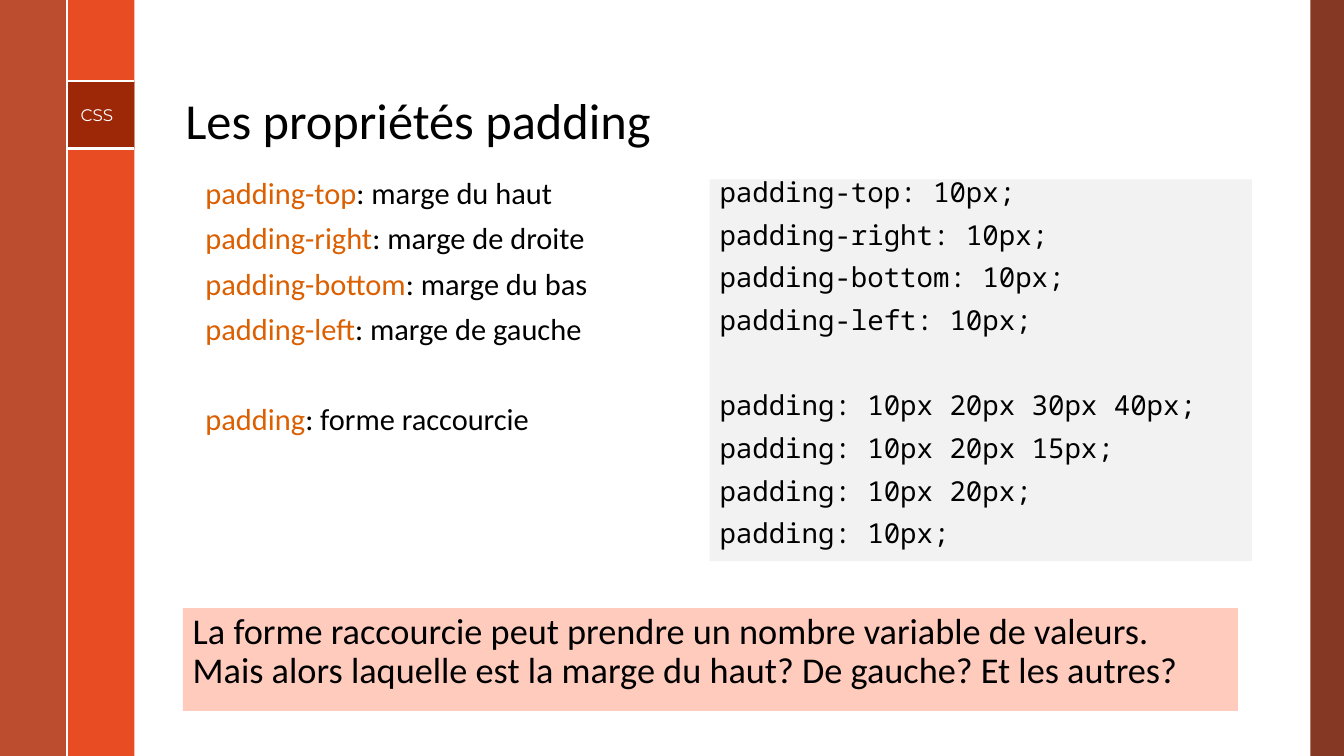
import pptx
import pptx.util
import pptx.dml.color
import pptx.enum.shapes
import pptx.enum.text
import pptx.oxml
import pptx.oxml.ns
import lxml.etree

WIDE, HIGH = 13.33, 7.5
COLS, ROWS = 20, 11.25
TAB_TOP, TAB_END = 1.21, 2.21

HUES = {
    "edge": "78230D",
    "band": "E84C22",
    "side": "B53513",
    "tab": "851D00",
    "white": "FFFFFF",
    "black": "000000",
    "word": "DC5F00",
    "gray": "F2F2F2",
    "pink": "FFCBBD",
}

FORMS = {
    "tab": {"size": 12, "name": "Montserrat", "hue": "white"},
    "title": {"size": 36, "name": "Calibri", "hue": "black"},
    "code": {"size": 19.6, "name": "Noto Sans Mono", "hue": "black"},
    "term": {"size": 21.7, "name": "Calibri", "hue": "word"},
    "sense": {"size": 21.7, "name": "Calibri", "hue": "black"},
    "note": {"size": 25.9, "name": "Calibri", "hue": "black"},
}

CODE = [
    ["padding-top: 10px;", "padding-right: 10px;", "padding-bottom: 10px;", "padding-left: 10px;"],
    [
        "padding: 10px 20px 30px 40px;",
        "padding: 10px 20px 15px;",
        "padding: 10px 20px;",
        "padding: 10px;",
    ],
]
TERMS = [
    [
        ("padding-top", "marge du haut"),
        ("padding-right", "marge de droite"),
        ("padding-bottom", "marge du bas"),
        ("padding-left", "marge de gauche"),
    ],
    [("padding", "forme raccourcie")],
]
NOTE = (
    "La forme raccourcie peut prendre un nombre variable de valeurs.\v"
    "Mais alors laquelle est la marge du haut? De gauche? Et les autres?"
)


def tint(name):
    return pptx.dml.color.RGBColor.from_string(HUES[name])


def place(col, row, cols, rows):
    across, down = WIDE / COLS, HIGH / ROWS
    return [pptx.util.Inches(n) for n in (col * across, row * down, cols * across, rows * down)]


def paint(shape, hue):
    shape.fill.solid()
    shape.fill.fore_color.rgb = tint(hue)


def add_bar(slide, spot, hue, share=100):
    bar = slide.shapes.add_shape(pptx.enum.shapes.MSO_SHAPE.RECTANGLE, *place(*spot))
    bar.shadow.inherit = False
    bar.line.fill.background()
    paint(bar, hue)
    if share < 100:
        shade = bar.fill._xPr.find(".//" + pptx.oxml.ns.qn("a:srgbClr"))
        alpha = lxml.etree.SubElement(shade, pptx.oxml.ns.qn("a:alpha"))
        alpha.set("val", str(share * 1000))


def add_rule(slide, col, row, cols, rows):
    left, top, width, height = place(col, row, cols, rows)
    rule = slide.shapes.add_connector(
        pptx.enum.shapes.MSO_CONNECTOR.STRAIGHT, left, top, left + width, top + height
    )
    rule.line.color.rgb = tint("white")
    rule.line.width = pptx.util.Pt(1.5)
    lxml.etree.SubElement(rule._element.spPr, pptx.oxml.ns.qn("a:effectLst"))


def add_run(line, text, form):
    for count, part in enumerate(text.split("\v")):
        if count:
            line.add_line_break()
        run = line.add_run()
        run.text = part
        for key, value in FORMS[form].items():
            if key == "hue":
                run.font.color.rgb = tint(value)
            else:
                setattr(run.font, key, pptx.util.Pt(value) if key == "size" else value)


def add_text(slide, spot, groups, space=1.0, gap=0, fill=None, anchor="TOP"):
    box = slide.shapes.add_textbox(*place(*spot))
    if fill:
        paint(box, fill)
    frame = box.text_frame
    frame.word_wrap = True
    frame.vertical_anchor = getattr(pptx.enum.text.MSO_ANCHOR, anchor)
    first = True
    for group in groups:
        for count, runs in enumerate(group):
            line = frame.paragraphs[0] if first else frame.add_paragraph()
            line.line_spacing = space
            if not first:
                line.space_before = pptx.util.Pt(14 if count else gap)
            first = False
            for text, form in runs:
                add_run(line, text, form)


def add_frame(slide):
    add_bar(slide, (19.5, 0, 0.5, ROWS), "edge", 90)
    add_bar(slide, (1, 0, 1, ROWS), "band")
    add_bar(slide, (0, 0, 1, ROWS), "side", 88)
    add_bar(slide, (1, TAB_TOP, 1, TAB_END - TAB_TOP), "tab", 75)
    for row in (TAB_TOP, TAB_END):
        add_rule(slide, 1, row, 1, 0)
    add_rule(slide, 1, 0, 0, ROWS)
    add_text(slide, (1.05, 1.48, 0.96, 0.46), [[[("CSS", "tab")]]])


def main():
    deck = pptx.Presentation()
    deck.slide_width = pptx.util.Inches(WIDE)
    deck.slide_height = pptx.util.Inches(HIGH)
    slide = deck.slides.add_slide(deck.slide_layouts[6])
    add_frame(slide)
    title = [[[("Les propriétés padding", "title")]]]
    add_text(slide, (2.61, 0.28, 16.05, 2.04), title, 0.9, anchor="BOTTOM")
    code = [[[(text, "code")] for text in group] for group in CODE]
    add_text(slide, (10.56, 2.67, 8.07, 5.68), code, 0.7, 44.4, "gray")
    terms = [[[(term, "term"), (": " + sense, "sense")] for term, sense in group] for group in TERMS]
    add_text(slide, (2.91, 2.67, 6.38, 4.38), terms, 0.7, 46.5)
    add_text(slide, (2.72, 9.05, 15.7, 1.53), [[[(NOTE, "note")]]], 0.9, fill="pink")
    deck.save("out.pptx")


if __name__ == "__main__":
    main()
